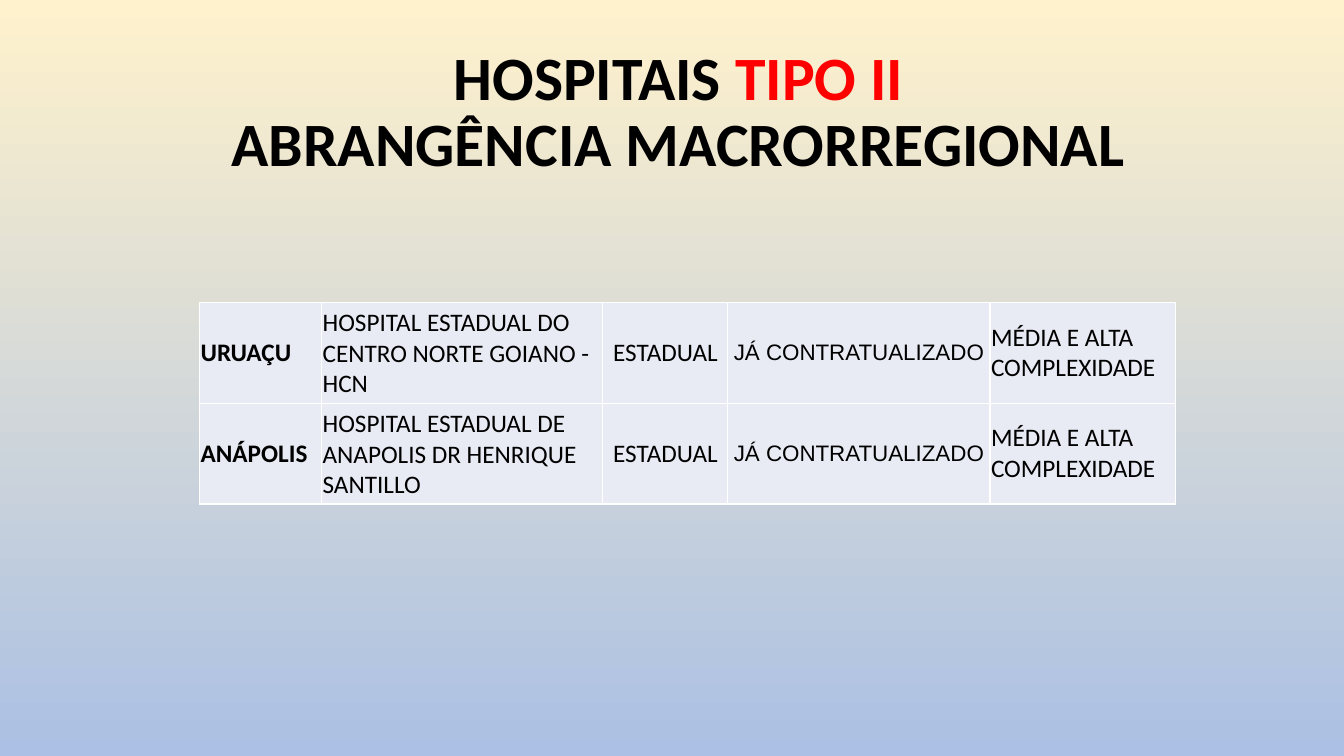
"""Build the slide listing type II hospitals with macro-regional coverage."""
from pptx import Presentation
from pptx import util as u
from pptx.dml.color import RGBColor
from pptx.enum import text
from pptx.oxml import parse_xml
from pptx.oxml.ns import nsdecls

BLACK = RGBColor(0x00, 0x00, 0x00)
RED = RGBColor(0xFF, 0x00, 0x00)
CREAM = RGBColor(0xFF, 0xF2, 0xCC)
SKY = RGBColor(0xAB, 0xC0, 0xE4)
CELL = RGBColor(0xE8, 0xEB, 0xF4)
BORDER = RGBColor(0xFF, 0xFF, 0xFF)

LEFT, CENTER = text.PP_ALIGN.LEFT, text.PP_ALIGN.CENTER

HEADING = [
    [("HOSPITAIS ", BLACK), ("TIPO II", RED)],
    [("ABRANGÊNCIA MACRORREGIONAL", BLACK)],
]
HOSPITALS = [
    ("URUAÇU", "HOSPITAL ESTADUAL DO CENTRO NORTE GOIANO - HCN",
     "ESTADUAL", "JÁ CONTRATUALIZADO", "MÉDIA E ALTA COMPLEXIDADE"),
    ("ANÁPOLIS", "HOSPITAL ESTADUAL DE ANAPOLIS DR HENRIQUE SANTILLO",
     "ESTADUAL", "JÁ CONTRATUALIZADO", "MÉDIA E ALTA COMPLEXIDADE"),
]
COLUMNS = [
    (1.21, LEFT, "Calibri", 18, True),
    (2.79, LEFT, "Calibri", 18, False),
    (1.24, CENTER, "Calibri", 18, False),
    (2.6, CENTER, "Arial", 16, False),
    (1.84, LEFT, "Calibri", 18, False),
]
ROW_HEIGHT = 1.0


def add_run(paragraph, words, font, size, bold, color):
    run = paragraph.add_run()
    run.text = words
    run.font.name = font
    run.font.size = u.Pt(size)
    run.font.bold = bold
    run.font.color.rgb = color


def add_borders(cell):
    properties = cell._tc.get_or_add_tcPr()
    for index, side in enumerate(("lnL", "lnR", "lnT", "lnB")):
        properties.insert(index, parse_xml(
            f'<a:{side} {nsdecls("a")} w="{u.Pt(0.96)}"><a:solidFill>'
            f'<a:srgbClr val="{BORDER}"/></a:solidFill></a:{side}>'))


def add_background(slide):
    fill = slide.background.fill
    fill.gradient()
    fill.gradient_angle = 270
    for stop, color, position in zip(fill.gradient_stops, (CREAM, SKY), (0, 1)):
        stop.color.rgb = color
        stop.position = position


def add_heading(slide):
    heading = slide.shapes.add_textbox(
        u.Inches(1.04), u.Inches(0.4), u.Inches(11.38), u.Inches(1.45)).text_frame
    heading.word_wrap = True
    heading.vertical_anchor = text.MSO_ANCHOR.MIDDLE
    paragraph = heading.paragraphs[0]
    paragraph.alignment = CENTER
    paragraph.line_spacing = 0.9
    for number, line in enumerate(HEADING):
        if number:
            paragraph.add_line_break()
        for words, color in line:
            add_run(paragraph, words, "Calibri", 44, True, color)


def add_hospitals(slide):
    width = sum(column[0] for column in COLUMNS)
    hospitals = slide.shapes.add_table(
        len(HOSPITALS), len(COLUMNS), u.Inches(1.98), u.Inches(3),
        u.Inches(width), u.Inches(ROW_HEIGHT * len(HOSPITALS))).table
    hospitals.first_row = hospitals.horz_banding = False
    for c, (column_width, align, font, size, bold) in enumerate(COLUMNS):
        hospitals.columns[c].width = u.Inches(column_width)
        for r, hospital in enumerate(HOSPITALS):
            cell = hospitals.cell(r, c)
            cell.fill.solid()
            cell.fill.fore_color.rgb = CELL
            cell.vertical_anchor = text.MSO_ANCHOR.MIDDLE
            cell.margin_left = cell.margin_right = u.Inches(0.01)
            cell.margin_top = cell.margin_bottom = u.Inches(0.05)
            add_borders(cell)
            paragraph = cell.text_frame.paragraphs[0]
            paragraph.alignment = align
            add_run(paragraph, hospital[c], font, size, bold, BLACK)


def main():
    deck = Presentation()
    deck.slide_width, deck.slide_height = u.Inches(13.33), u.Inches(7.5)
    slide = deck.slides.add_slide(deck.slide_layouts[6])
    add_background(slide)
    add_heading(slide)
    add_hospitals(slide)
    deck.save("out.pptx")


if __name__ == "__main__":
    main()
